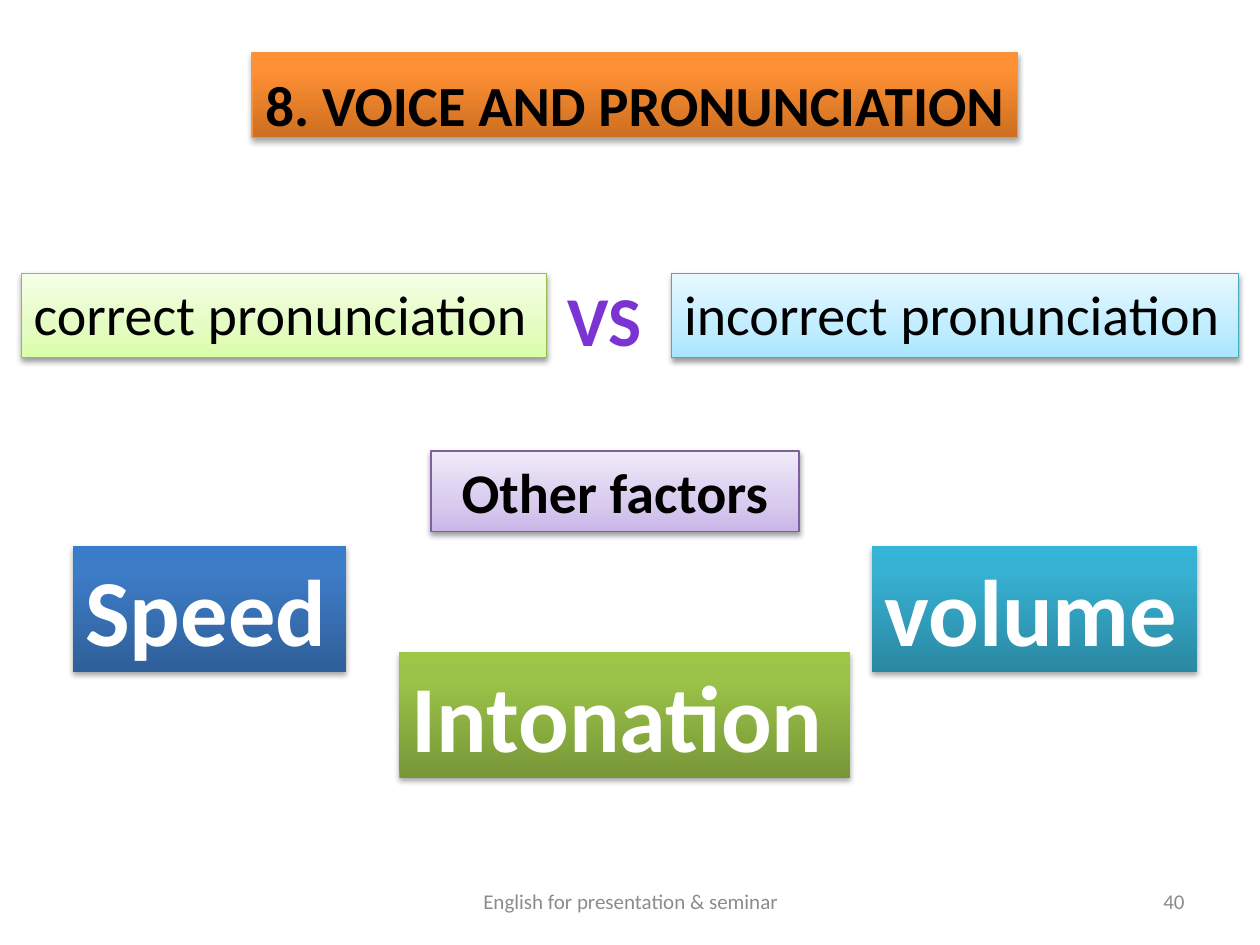
import copy
import pptx
import pptx.dml.color
import pptx.enum.shapes
import pptx.enum.text
import pptx.oxml
import pptx.oxml.ns
import pptx.util

Cm = pptx.util.Cm
Align = pptx.enum.text.PP_ALIGN
Anchor = pptx.enum.text.MSO_ANCHOR
qn = pptx.oxml.ns.qn
LIGHT = (0, 0.35, 1)
DEEP = (0, 0.8, 1)


def color(code):
    return pptx.dml.color.RGBColor.from_string(code)


def write(shape, text, size, code, bold=False, align=Align.LEFT, anchor=Anchor.TOP):
    frame = shape.text_frame
    frame.word_wrap = True
    frame.vertical_anchor = anchor
    para = frame.paragraphs[0]
    para.text = text
    para.alignment = align
    para.font.name = "Calibri"
    para.font.size = pptx.util.Pt(size)
    para.font.bold = bold
    para.font.color.rgb = color(code)


def label(slide, box, text, size, code, **style):
    shape = slide.shapes.add_textbox(*map(Cm, box))
    write(shape, text, size, code, **style)


def shade(shape, alpha):
    shape.shadow.inherit = False
    effect = shape._element.spPr.find(qn("a:effectLst"))
    effect.append(pptx.oxml.parse_xml(
        f'<a:outerShdw {pptx.oxml.ns.nsdecls("a")} blurRad="40000" dist="22000" '
        f'dir="5400000" rotWithShape="0"><a:srgbClr val="000000">'
        f'<a:alpha val="{alpha * 1000}"/></a:srgbClr></a:outerShdw>'))


def panel(slide, box, codes, stops, line=None):
    kind = pptx.enum.shapes.MSO_SHAPE.RECTANGLE
    shape = slide.shapes.add_shape(kind, *map(Cm, box))
    shape.fill.gradient()
    shape.fill.gradient_angle = 90
    group = shape._element.spPr.find(qn("a:gradFill")).find(qn("a:gsLst"))
    group.append(copy.deepcopy(group[0]))
    for stop, code, place in zip(shape.fill.gradient_stops, codes, stops):
        stop.color.rgb = color(code)
        stop.position = place
    if line:
        shape.line.color.rgb = color(line)
        shape.line.width = pptx.util.Pt(0.75)
    else:
        shape.line.fill.background()
    shade(shape, 38 if stops == LIGHT else 35)
    return shape


def title(slide, box):
    shape = panel(slide, box, ("CC6E20", "FF9034", "FF9136"), DEEP, "F69240")
    write(shape, "8. VOICE AND PRONUNCIATION", 32.4, "000000", bold=True,
          align=Align.CENTER, anchor=Anchor.MIDDLE)
    frame = shape.text_frame
    frame.word_wrap = False
    frame.margin_top = Cm(0.33)
    frame.margin_bottom = 0


def versus(slide, box):
    left, top, width, height = box
    right = 11.43
    sides = (
        (left, 10.59, "correct pronunciation", ("DAFDA7", "E4FCC2", "F5FFE7"), "98B955"),
        (left + width - right, right, "incorrect pronunciation",
         ("A7E6FF", "C1EDFF", "E7F8FF"), "46AAC5"),
    )
    for x, wide, text, codes, line in sides:
        shape = panel(slide, (x, top, wide, height), codes, LIGHT, line)
        write(shape, text, 32, "000000")
    label(slide, (left + 10.57, top - 0.07, 2.36, 1.96), "VS", 40, "7B34D2",
          bold=True, align=Align.CENTER)


def factors(slide, box):
    left, top, width, height = box
    head = panel(slide, (left + 7.22, top, 7.42, 1.63),
                 ("C9B5E8", "D8CBEE", "F0EAF9"), LIGHT, "7D60A0")
    write(head, "Other factors", 32, "000000", bold=True, align=Align.CENTER)
    tall = 2.55
    items = (
        ("Speed", 0, 1.91, 5.51, ("2F5F99", "3D7CC7", "3A7CCB")),
        ("Intonation", 6.58, height - tall, 9.09, ("779737", "9BC348", "9DC746")),
        ("volume", width - 6.55, 1.91, 6.55, ("2A88A2", "37B1D2", "34B4D6")),
    )
    for text, x, y, wide, codes in items:
        shape = panel(slide, (left + x, top + y, wide, tall), codes, DEEP)
        write(shape, text, 54, "FFFFFF", bold=True)


def footer(slide, box):
    left, top, width, height = box
    label(slide, (left, top, 8.05, height), "English for presentation & seminar",
          12, "8C8C8C", align=Align.CENTER, anchor=Anchor.MIDDLE)
    label(slide, (left + width - 5.92, top, 5.92, height), "40",
          12, "8C8C8C", align=Align.RIGHT, anchor=Anchor.MIDDLE)


def main():
    deck = pptx.Presentation()
    deck.slide_width = Cm(25.4)
    deck.slide_height = Cm(19.05)
    slide = deck.slides.add_slide(deck.slide_layouts[6])
    title(slide, (5.08, 1.07, 15.44, 1.7))
    versus(slide, (0.43, 5.51, 24.54, 1.7))
    factors(slide, (1.47, 9.09, 22.66, 6.6))
    footer(slide, (8.69, 17.65, 15.44, 1.02))
    deck.save("out.pptx")


if __name__ == "__main__":
    main()
